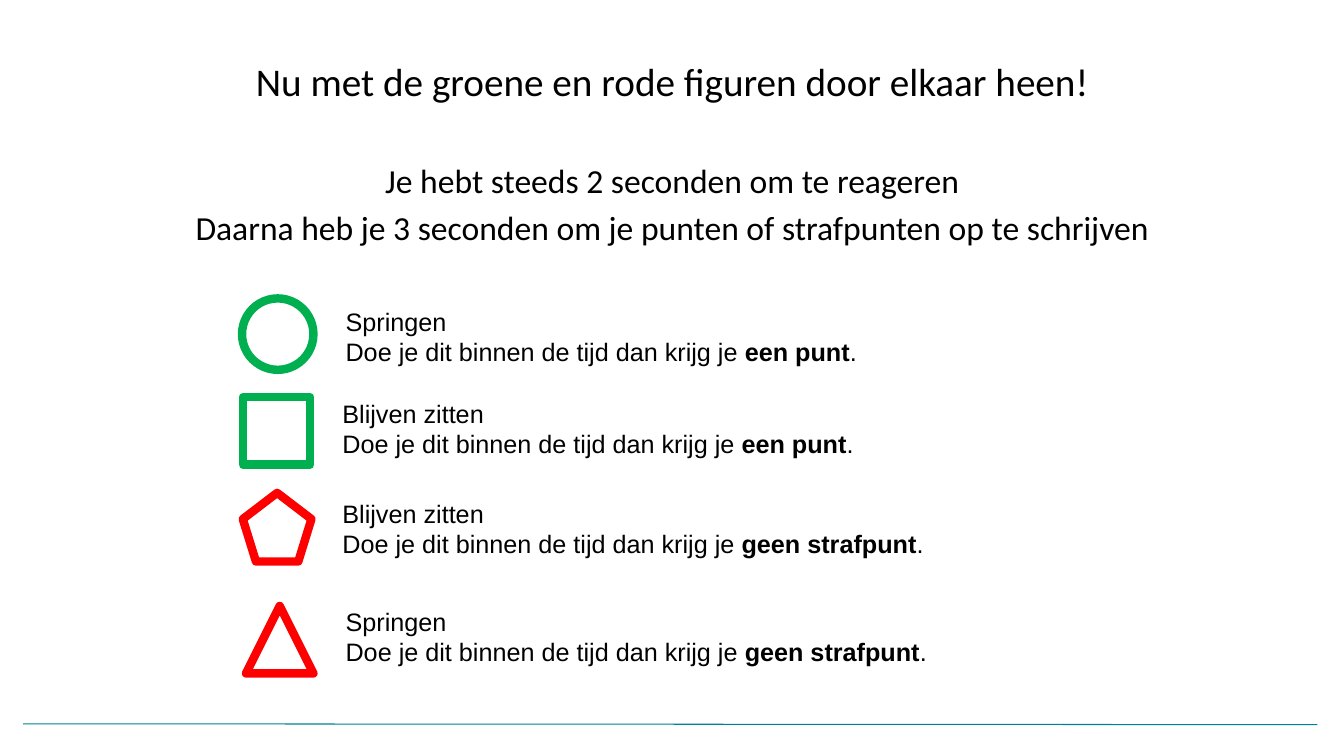
from pptx import Presentation
from pptx.dml.color import RGBColor
from pptx.enum import shapes, text
from pptx.oxml import parse_xml
from pptx.oxml.ns import nsdecls
from pptx.util import Cm, Pt

COLOURS = {"text": "000000", "green": "00B050", "red": "FF0000", "rule": "008295"}
KIND = shapes.MSO_AUTO_SHAPE_TYPE


def colour(name):
    return RGBColor.from_string(COLOURS[name])


def format_paragraph(p, font, size, align=text.PP_ALIGN.LEFT):
    p.alignment = align
    p.font.name = font
    p.font.size = Pt(size)
    p.font.color.rgb = colour("text")


def prepare_frame(tf):
    tf.word_wrap = True
    tf.auto_size = text.MSO_AUTO_SIZE.NONE
    tf.vertical_anchor = text.MSO_ANCHOR.TOP


def add_title(s, wording):
    title = s.shapes.title
    title.left, title.top, title.width, title.height = Cm(1.7), Cm(1.32), Cm(30.48), Cm(1.6)
    tf = title.text_frame
    prepare_frame(tf)
    tf.text = wording
    format_paragraph(tf.paragraphs[0], "Calibri", 28, text.PP_ALIGN.CENTER)


def add_intro(s, lines):
    tf = s.shapes.add_textbox(Cm(1.7), Cm(3.9), Cm(30.48), Cm(2.6)).text_frame
    prepare_frame(tf)
    for i, line in enumerate(lines):
        p = tf.paragraphs[0] if i == 0 else tf.add_paragraph()
        p.add_run().text = line
        format_paragraph(p, "Calibri", 24, text.PP_ALIGN.CENTER)
        if i:
            p.space_before = Pt(4.8)


def add_figure(s, kind, line_colour, left, top, size):
    sp = s.shapes.add_shape(kind, Cm(left), Cm(top), Cm(size), Cm(size))
    sp.shadow.inherit = False
    sp.fill.background()
    sp.line.color.rgb = colour(line_colour)
    sp.line.width = Pt(6)
    sp.line._get_or_add_ln().append(parse_xml(f"<a:round {nsdecls('a')}/>"))


def add_rule_text(s, left, top, action, reward):
    tf = s.shapes.add_textbox(Cm(left), Cm(top), Cm(17), Cm(1.8)).text_frame
    prepare_frame(tf)
    p = tf.paragraphs[0]
    p.add_run().text = action
    format_paragraph(p, "Arial", 18)
    p = tf.add_paragraph()
    p.add_run().text = "Doe je dit binnen de tijd dan krijg je "
    r = p.add_run()
    r.text = reward
    r.font.bold = True
    p.add_run().text = "."
    format_paragraph(p, "Arial", 18)


def add_footer_line(s):
    line = s.shapes.add_connector(shapes.MSO_CONNECTOR.STRAIGHT,
                                  Cm(0.58), Cm(18.24), Cm(33.2), Cm(18.26))
    line.line.color.rgb = colour("rule")
    line.line.width = Pt(0.75)
    line._element.spPr.append(parse_xml(f"<a:effectLst {nsdecls('a')}/>"))


def main():
    prs = Presentation()
    prs.slide_width, prs.slide_height = Cm(33.87), Cm(19.05)
    s = prs.slides.add_slide(prs.slide_layouts[5])

    # Heading and timing
    add_footer_line(s)
    add_title(s, "Nu met de groene en rode figuren door elkaar heen!")
    add_intro(s, ["Je hebt steeds 2 seconden om te reageren",
                  "Daarna heb je 3 seconden om je punten of strafpunten op te schrijven"])

    # Figure (kind, colour, left, top, size) and its rule (left, top, action, reward)
    rules = [
        ((KIND.OVAL, "green", 6.1, 7.52, 1.8), (8.46, 7.59, "Springen", "een punt")),
        ((KIND.RECTANGLE, "green", 6.12, 10.01, 1.7), (8.38, 9.91, "Blijven zitten", "een punt")),
        ((KIND.REGULAR_PENTAGON, "red", 6.12, 12.42, 1.73),
         (8.38, 12.42, "Blijven zitten", "geen strafpunt")),
        ((KIND.FLOWCHART_EXTRACT, "red", 6.2, 15.27, 1.7),
         (8.46, 15.16, "Springen", "geen strafpunt")),
    ]
    for figure, rule in rules:
        add_figure(s, *figure)
        add_rule_text(s, *rule)

    prs.save("out.pptx")


if __name__ == "__main__":
    main()
